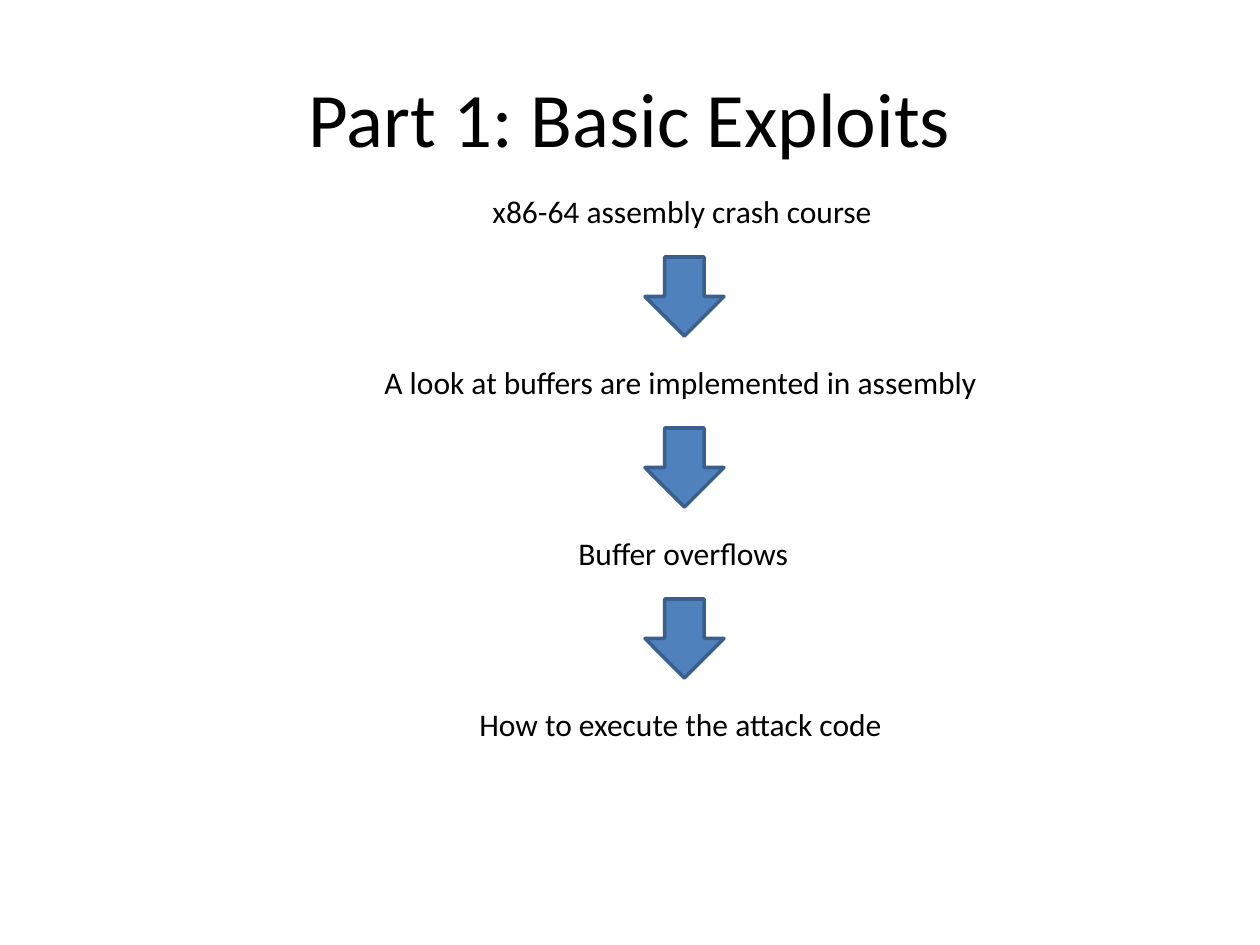
from pptx import Presentation
from pptx.dml.color import RGBColor
from pptx.enum.shapes import MSO_SHAPE
from pptx.enum.text import MSO_ANCHOR, MSO_AUTO_SIZE, PP_ALIGN
from pptx.util import Emu, Pt

EMU_PER_PX = 914400 / 126


def px(*lengths):
    """Turn px lengths into a list of EMU lengths."""
    return [Emu(round(length * EMU_PER_PX)) for length in lengths]


def write(para, text, size):
    span = para.add_run()
    span.text = text
    span.font.name = "Calibri"
    span.font.size = Pt(size)
    span.font.color.rgb = RGBColor.from_string("000000")


deck = Presentation()
deck.slide_width, deck.slide_height = px(1260, 945)
page = deck.slides.add_slide(deck.slide_layouts[5])

title = page.shapes.title
title.left, title.top, title.width, title.height = px(63, 38, 1134, 157)
title.text_frame.vertical_anchor = MSO_ANCHOR.MIDDLE
title_para = title.text_frame.paragraphs[0]
title_para.alignment = PP_ALIGN.CENTER
write(title_para, "Part 1: Basic Exploits", 44)

# Each step: text, left, width
steps = [
    ("x86-64 assembly crash course", 480, 408),
    ("A look at buffers are implemented in assembly", 372, 625),
    ("Buffer overflows", 566, 238),
    ("How to execute the attack code", 467, 433),
]
first_top, step_pitch = 186, 171
arrow_left, arrow_size, arrow_drop = 645, 79, 71

for index, (text, left, width) in enumerate(steps):
    top = first_top + index * step_pitch
    box = page.shapes.add_textbox(*px(left, top, width, 50))
    box.text_frame.word_wrap = False
    box.text_frame.auto_size = MSO_AUTO_SIZE.SHAPE_TO_FIT_TEXT
    write(box.text_frame.paragraphs[0], text, 18)

    if index < len(steps) - 1:
        arrow = page.shapes.add_shape(
            MSO_SHAPE.DOWN_ARROW,
            *px(arrow_left, top + arrow_drop, arrow_size, arrow_size))
        arrow.shadow.inherit = False
        arrow.fill.solid()
        arrow.fill.fore_color.rgb = RGBColor.from_string("4F81BD")
        arrow.line.color.rgb = RGBColor.from_string("3A5F8C")
        arrow.line.width = Pt(2)

deck.save("out.pptx")
